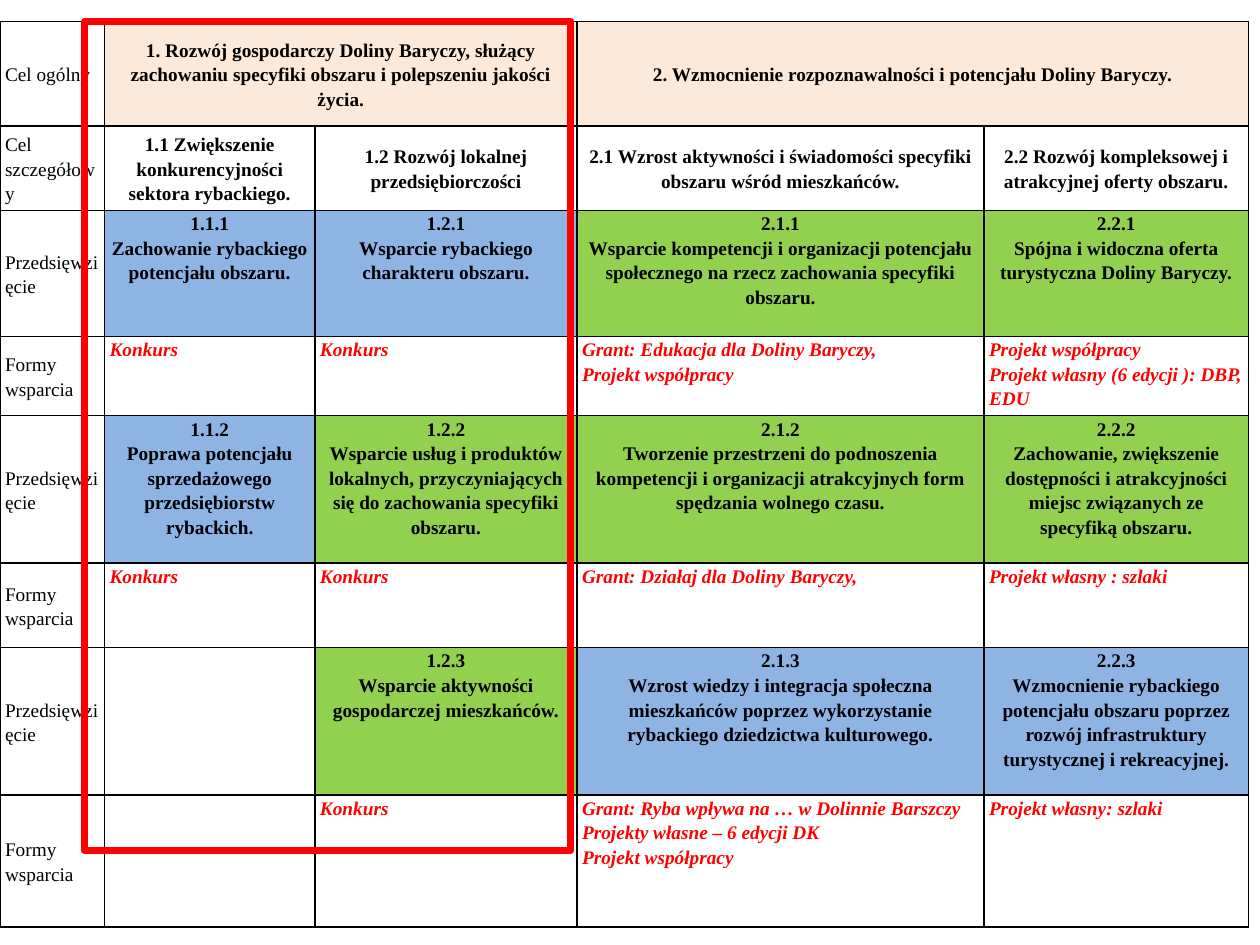
from dataclasses import dataclass
from typing import Optional

import lxml.etree
import pptx
import pptx.dml.color
import pptx.enum.shapes
import pptx.enum.text
import pptx.oxml.ns
import pptx.util

Inches = pptx.util.Inches
Align = pptx.enum.text.PP_ALIGN
Anchor = pptx.enum.text.MSO_ANCHOR


@dataclass(frozen=True)
class Theme:
    font: str = "Times New Roman"
    size: float = 11
    spacing: float = 1.15
    ink: str = "000000"
    accent: str = "FF0000"
    peach: str = "FDE9D9"
    white: str = "FFFFFF"
    blue: str = "8EB4E3"
    green: str = "92D050"
    border: float = 1
    frame: float = 3.75


THEME = Theme()


@dataclass(frozen=True)
class Entry:
    lines: tuple[str, ...] = ()
    fill: Optional[str] = None
    color: str = THEME.ink
    bold: bool = True
    italic: bool = False
    align: Align = Align.CENTER
    anchor: Anchor = Anchor.TOP
    span: int = 1


@dataclass(frozen=True)
class Level:
    label: str
    height: float
    entries: tuple[Entry, ...]


def heading(text: str, fill: str, span: int = 1) -> Entry:
    return Entry((text,), fill, anchor=Anchor.MIDDLE, span=span)


def project(number: str, text: str, fill: str) -> Entry:
    return Entry((number, text), fill)


def support(*lines: str) -> Entry:
    return Entry(lines, color=THEME.accent, italic=True, align=Align.LEFT)


def row_label(text: str) -> Entry:
    return Entry((text,), bold=False, align=Align.JUSTIFY, anchor=Anchor.MIDDLE)


COLUMN_WIDTHS = (0.83, 1.67, 2.08, 3.23, 2.1)

LEVELS = (
    Level("Cel ogólny", 0.83, (
        heading("1. Rozwój gospodarczy Doliny Baryczy, służący zachowaniu specyfiki "
                "obszaru i polepszeniu jakości życia.", THEME.peach, 2),
        heading("2. Wzmocnienie rozpoznawalności i potencjału Doliny Baryczy.",
                THEME.peach, 2),
    )),
    Level("Cel szczegółowy", 0.67, (
        heading("1.1 Zwiększenie konkurencyjności sektora rybackiego.", THEME.white),
        heading("1.2 Rozwój lokalnej przedsiębiorczości", THEME.white),
        heading("2.1 Wzrost aktywności i świadomości specyfiki obszaru wśród "
                "mieszkańców.", THEME.white),
        heading("2.2 Rozwój kompleksowej i atrakcyjnej oferty obszaru.", THEME.white),
    )),
    Level("Przedsięwzięcie", 1, (
        project("1.1.1", "Zachowanie rybackiego potencjału obszaru.", THEME.blue),
        project("1.2.1", "Wsparcie rybackiego charakteru obszaru.", THEME.blue),
        project("2.1.1", "Wsparcie kompetencji i organizacji potencjału społecznego "
                "na rzecz zachowania specyfiki obszaru.", THEME.green),
        project("2.2.1", "Spójna i widoczna oferta turystyczna Doliny Baryczy.",
                THEME.green),
    )),
    Level("Formy wsparcia", 0.63, (
        support("Konkurs"),
        support("Konkurs"),
        support("Grant: Edukacja dla Doliny Baryczy,", "Projekt współpracy"),
        support("Projekt współpracy", "Projekt własny (6 edycji ): DBP, EDU"),
    )),
    Level("Przedsięwzięcie", 1.17, (
        project("1.1.2", "Poprawa potencjału sprzedażowego przedsiębiorstw rybackich.",
                THEME.blue),
        project("1.2.2", "Wsparcie usług i produktów lokalnych, przyczyniających się "
                "do zachowania specyfiki obszaru.", THEME.green),
        project("2.1.2", "Tworzenie przestrzeni do podnoszenia kompetencji i "
                "organizacji atrakcyjnych form spędzania wolnego czasu.", THEME.green),
        project("2.2.2", "Zachowanie, zwiększenie dostępności i atrakcyjności miejsc "
                "związanych ze specyfiką obszaru.", THEME.green),
    )),
    Level("Formy wsparcia", 0.67, (
        support("Konkurs"),
        support("Konkurs"),
        support("Grant: Działaj dla Doliny Baryczy,"),
        support("Projekt własny : szlaki"),
    )),
    Level("Przedsięwzięcie", 1.17, (
        Entry(),
        project("1.2.3", "Wsparcie aktywności gospodarczej mieszkańców.", THEME.green),
        project("2.1.3", "Wzrost wiedzy i integracja społeczna mieszkańców poprzez "
                "wykorzystanie rybackiego dziedzictwa kulturowego.", THEME.blue),
        project("2.2.3", "Wzmocnienie rybackiego potencjału obszaru poprzez rozwój "
                "infrastruktury turystycznej i rekreacyjnej.", THEME.blue),
    )),
    Level("Formy wsparcia", 1.05, (
        Entry(),
        support("Konkurs"),
        support("Grant: Ryba wpływa na … w Dolinnie Barszczy",
                "Projekty własne – 6 edycji DK", "Projekt współpracy"),
        support("Projekt własny: szlaki"),
    )),
)


def rgb(value: str) -> pptx.dml.color.RGBColor:
    return pptx.dml.color.RGBColor.from_string(value)


def write_line(paragraph, text: str, *, color: str, bold: bool, italic: bool,
               align: Align) -> None:
    paragraph.alignment = align
    paragraph.line_spacing = THEME.spacing
    run = paragraph.add_run()
    run.text = text
    run.font.name = THEME.font
    run.font.size = pptx.util.Pt(THEME.size)
    run.font.bold = bold
    run.font.italic = italic
    run.font.color.rgb = rgb(color)


def draw_borders(cell) -> None:
    properties = cell._tc.get_or_add_tcPr()
    qn = pptx.oxml.ns.qn
    for side in ("a:lnL", "a:lnR", "a:lnT", "a:lnB"):
        edge = lxml.etree.SubElement(properties, qn(side),
                                     w=str(pptx.util.Pt(THEME.border)))
        paint = lxml.etree.SubElement(edge, qn("a:solidFill"))
        lxml.etree.SubElement(paint, qn("a:srgbClr"), val=THEME.ink)


def draw_entry(cell, entry: Entry) -> None:
    if entry.fill:
        cell.fill.solid()
        cell.fill.fore_color.rgb = rgb(entry.fill)
    else:
        cell.fill.background()
    cell.vertical_anchor = entry.anchor
    cell.margin_left = cell.margin_right = Inches(0.04)
    cell.margin_top = cell.margin_bottom = 0
    for index, line in enumerate(entry.lines):
        frame = cell.text_frame
        paragraph = frame.add_paragraph() if index else frame.paragraphs[0]
        write_line(paragraph, line, color=entry.color, bold=entry.bold,
                   italic=entry.italic, align=entry.align)


def draw_goals(slide) -> None:
    goals = slide.shapes.add_table(
        len(LEVELS), len(COLUMN_WIDTHS), 0, Inches(0.17),
        Inches(sum(COLUMN_WIDTHS)), Inches(sum(level.height for level in LEVELS))).table
    goals.first_row = goals.horz_banding = False
    for column, width in zip(goals.columns, COLUMN_WIDTHS):
        column.width = Inches(width)
    for cell in goals.iter_cells():
        draw_borders(cell)
    for row, level in enumerate(LEVELS):
        goals.rows[row].height = Inches(level.height)
        column = 0
        for entry in (row_label(level.label), *level.entries):
            cell = goals.cell(row, column)
            if entry.span > 1:
                cell.merge(goals.cell(row, column + entry.span - 1))
            draw_entry(cell, entry)
            column += entry.span


def draw_highlight(slide) -> None:
    highlight = slide.shapes.add_shape(
        pptx.enum.shapes.MSO_SHAPE.RECTANGLE,
        Inches(0.67), Inches(0.17), Inches(3.86), Inches(6.58))
    highlight.shadow.inherit = False
    highlight.fill.background()
    highlight.line.color.rgb = rgb(THEME.accent)
    highlight.line.width = pptx.util.Pt(THEME.frame)


def main() -> None:
    deck = pptx.Presentation()
    deck.slide_width, deck.slide_height = Inches(10), Inches(7.5)
    slide = deck.slides.add_slide(deck.slide_layouts[6])
    draw_goals(slide)
    draw_highlight(slide)
    deck.save("out.pptx")


if __name__ == "__main__":
    main()
